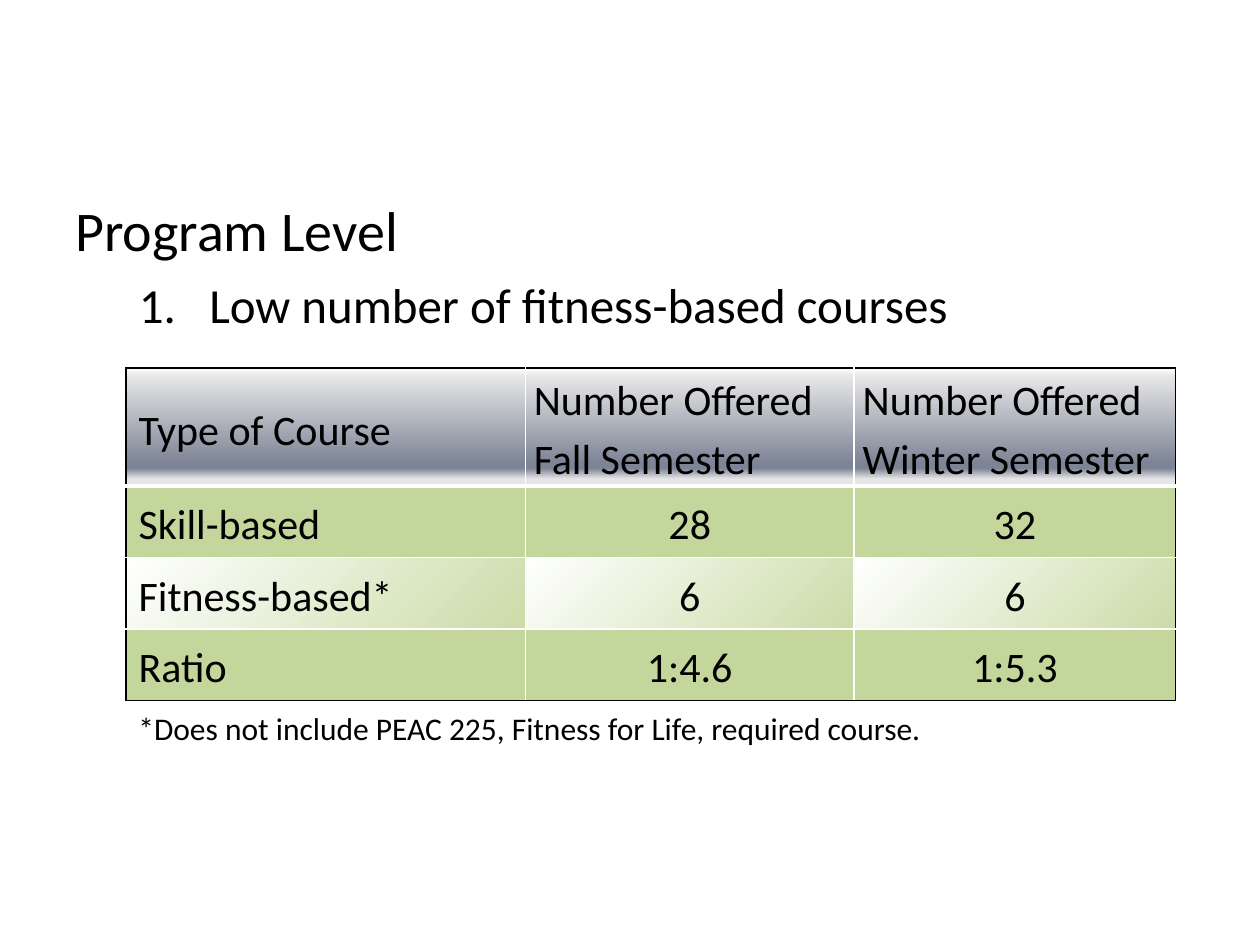
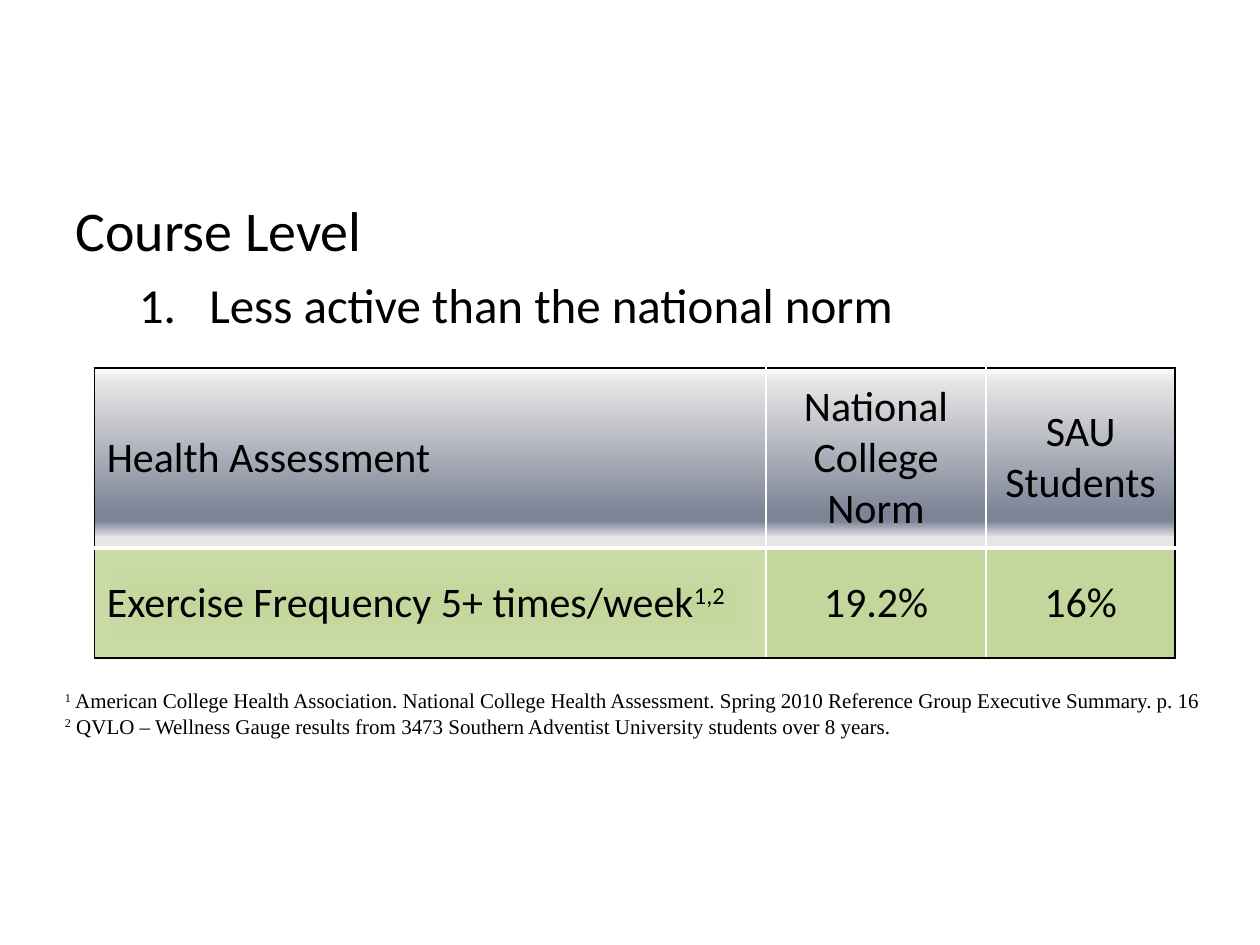
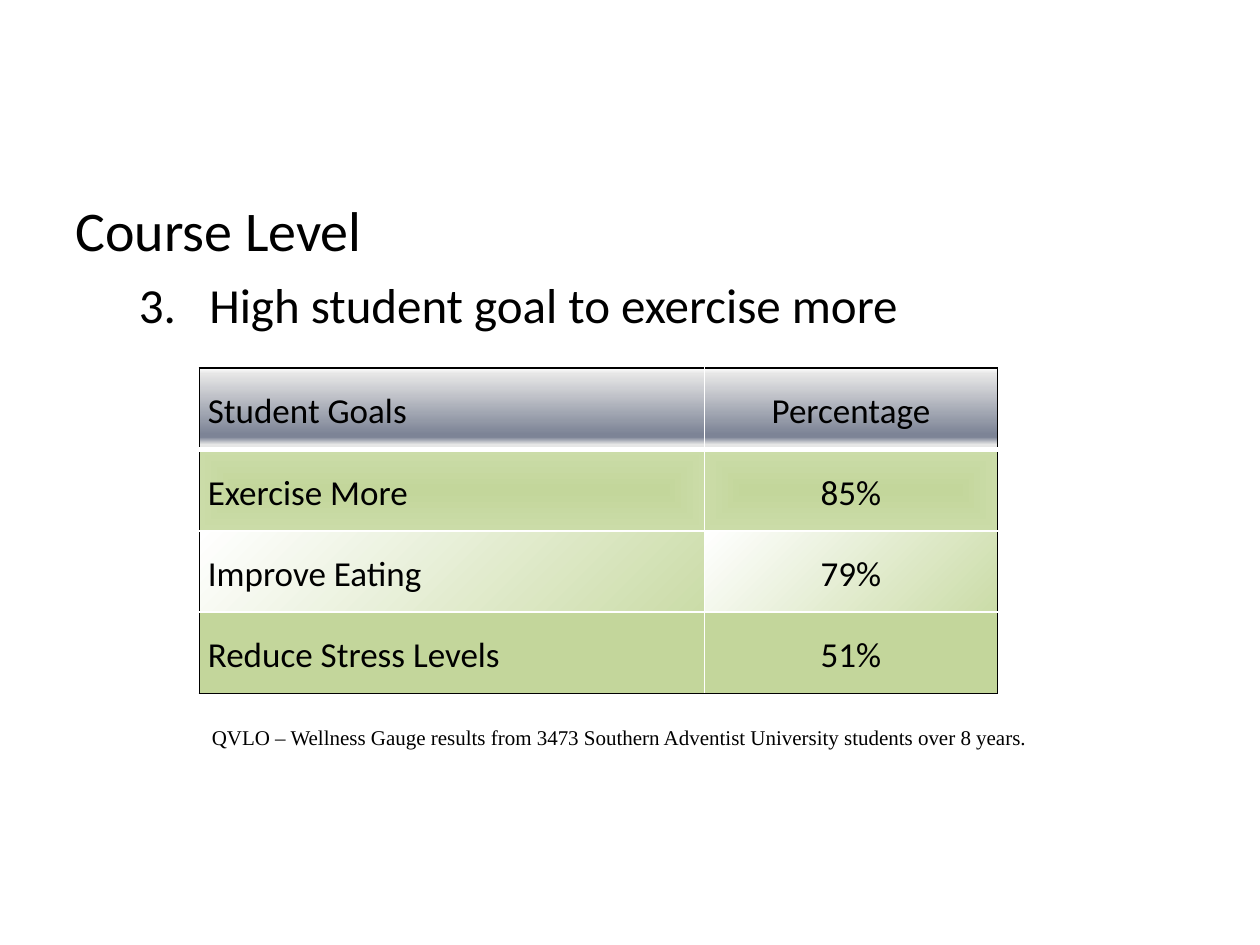
"""Build three slides on course levels, each with a heading, a table and a footnote."""
from itertools import cycle

from pptx import Presentation as Deck
from pptx.dml.color import RGBColor as Color
from pptx.enum.text import MSO_ANCHOR as Anchor, PP_ALIGN as Align
from pptx.oxml import parse_xml as to_xml
from pptx.oxml.ns import nsdecls
from pptx.util import Cm, Pt

HEX = {"ink": "000000", "rule": "FFFFFF", "flat": "C3D69B", "pale": "CBDCA8",
       "mist": "E6E6E6", "slate": "7D8496"}
BODY, NOTE = "Calibri", "Times New Roman"
TOP = 7.42
SIDE = 0.17
DOWN = '<a:lin ang="5400000" scaled="0"/>'
SLANT = '<a:lin ang="2700000" scaled="0"/>'
INNER = '<a:path path="rect"><a:fillToRect l="50000" t="50000" r="50000" b="50000"/></a:path>'
GRADES = {
    "head": ([(0, "rule"), (7, "mist"), (81, "slate"), (85, "slate"),
              (94, "mist"), (100, "mist")], DOWN),
    "fade": ([(0, "rule"), (100, "pale")], SLANT),
    "glow": ([(0, "flat"), (100, "pale")], INNER),
}


def write(para, text, size, font=BODY):
    """Write text in one style, raising every second part split by a caret."""
    for i, part in enumerate(text.split("^")):
        if not part:
            continue
        run = para.add_run()
        run.text = part
        run.font.size, run.font.name = Pt(size), font
        run.font.color.rgb = Color.from_string(HEX["ink"])
        if i % 2:
            run._r.get_or_add_rPr().set("baseline", "30000")


def add_box(slide, left, top, width, height, anchor=Anchor.TOP):
    """Add a wrapping text box and return its frame."""
    box = slide.shapes.add_textbox(Cm(left), Cm(top), Cm(width), Cm(height))
    frame = box.text_frame
    frame.word_wrap, frame.vertical_anchor = True, anchor
    return frame


def add_head(slide, title, point, start=1):
    """Add the level title and its numbered point."""
    frame = add_box(slide, 1.27, 3.81, 22.86, 12.57)
    write(frame.paragraphs[0], title, 32)
    para = frame.add_paragraph()
    props = para._p.get_or_add_pPr()
    props.set("marL", str(Cm(2.7)))
    props.set("indent", str(Cm(-1.42)))
    props.append(to_xml(f'<a:buAutoNum {nsdecls("a")} type="arabicPeriod" startAt="{start}"/>'))
    para.space_before = Pt(7)
    write(para, point, 28)


def add_note(slide, spot, lines, size=12, font=NOTE, anchor=Anchor.MIDDLE):
    """Add the footnote under the table."""
    frame = add_box(slide, *spot, anchor)
    for i, line in enumerate(lines):
        para = frame.add_paragraph() if i else frame.paragraphs[0]
        write(para, line, size, font)


def edge(cell, side, tint, width):
    """Draw one border of a cell."""
    cell._tc.get_or_add_tcPr().append(to_xml(
        f'<a:ln{side} {nsdecls("a")} w="{Pt(width)}"><a:solidFill>'
        f'<a:srgbClr val="{HEX[tint]}"/></a:solidFill></a:ln{side}>'))


def paint(cell, fill):
    """Fill a cell with a flat colour or a named gradient."""
    if fill not in GRADES:
        cell.fill.solid()
        cell.fill.fore_color.rgb = Color.from_string(HEX[fill])
        return
    stops, shade = GRADES[fill]
    marks = "".join(f'<a:gs pos="{pos * 1000}"><a:srgbClr val="{HEX[tint]}"/></a:gs>'
                    for pos, tint in stops)
    cell._tc.get_or_add_tcPr().append(to_xml(
        f'<a:gradFill {nsdecls("a")} rotWithShape="1"><a:gsLst>{marks}</a:gsLst>'
        f'{shade}</a:gradFill>'))


def add_grid(slide, left, cols, highs, rows, size=24, space=1.15,
             slim=1, head=Align.CENTER):
    """Add a table with black outer and white inner borders; columns from slim on have thin insets."""
    tall, wide = len(rows), len(cols)
    grid = slide.shapes.add_table(tall, wide, Cm(left), Cm(TOP),
                                  Cm(sum(cols)), Cm(sum(highs))).table
    grid.first_row = grid.horz_banding = False
    for col, width in zip(grid.columns, cols):
        col.width = Cm(width)
    for r, (fills, *texts) in enumerate(rows):
        grid.rows[r].height = Cm(highs[r])
        for c, (text, fill) in enumerate(zip(texts, cycle(fills.split()))):
            cell = grid.cell(r, c)
            cell.vertical_anchor = Anchor.MIDDLE
            if c >= slim:
                cell.margin_left = cell.margin_right = Cm(SIDE)
                cell.margin_top = cell.margin_bottom = 0
            para = cell.text_frame.paragraphs[0]
            para.line_spacing = space
            para.alignment = Align.LEFT if c == 0 else Align.CENTER if r else head
            write(para, text, size)
            outer = {"L": c == 0, "R": c == wide - 1, "T": r == 0, "B": r == tall - 1}
            for side, rim in outer.items():
                edge(cell, side, "ink" if rim else "rule", 3 if side == "B" and r == 0 else 1)
            paint(cell, fill)


def main():
    """Build the deck and save it."""
    deck = Deck()
    deck.slide_width, deck.slide_height = Cm(25.4), Cm(19.05)
    first, second, third = (deck.slides.add_slide(deck.slide_layouts[6]) for _ in range(3))
    study = "QVLO – Wellness Gauge results from 3473 Southern Adventist University students over 8 years."

    add_head(first, "Program Level", "Low number of fitness-based courses")
    add_grid(first, 2.54, [8.05, 6.63, 6.48], [2.38] + [1.44] * 3, [
        ("head", "Type of Course", "Number Offered Fall Semester", "Number Offered Winter Semester"),
        ("flat", "Skill-based", "28", "32"),
        ("fade", "Fitness-based*", "6", "6"),
        ("flat", "Ratio", "1:4.6", "1:5.3"),
    ], head=Align.LEFT)
    add_note(first, (2.54, 14.17, 16.51, 1.02),
             ["*Does not include PEAC 225, Fitness for Life, required course."],
             18, BODY, Anchor.TOP)

    add_head(second, "Course Level", "Less active than the national norm")
    add_grid(second, 1.9, [13.54, 4.44, 3.81], [3.63, 2.21], [
        ("head", "Health Assessment", "National College Norm", "SAU Students"),
        ("glow flat flat", "Exercise Frequency 5+ times/week^1,2", "19.2%", "16%"),
    ], space=1.0)
    add_note(second, (1.06, 13.74, 23.93, 1.27), [
        "^1^ American College Health Association. National College Health Assessment. "
        "Spring 2010 Reference Group Executive Summary. p. 16",
        f"^2^ {study}",
    ])

    add_head(third, "Course Level", "High student goal to exercise more", 3)
    add_grid(third, 4.02, [10.18, 5.91], [1.64] * 4, [
        ("head", "Student Goals", "Percentage"),
        ("glow", "Exercise More", "85%"),
        ("fade", "Improve Eating", "79%"),
        ("flat", "Reduce Stress Levels", "51%"),
    ], size=20, slim=0)
    add_note(third, (4.02, 14.48, 17.98, 0.77), [study])

    deck.save("out.pptx")


if __name__ == "__main__":
    main()
